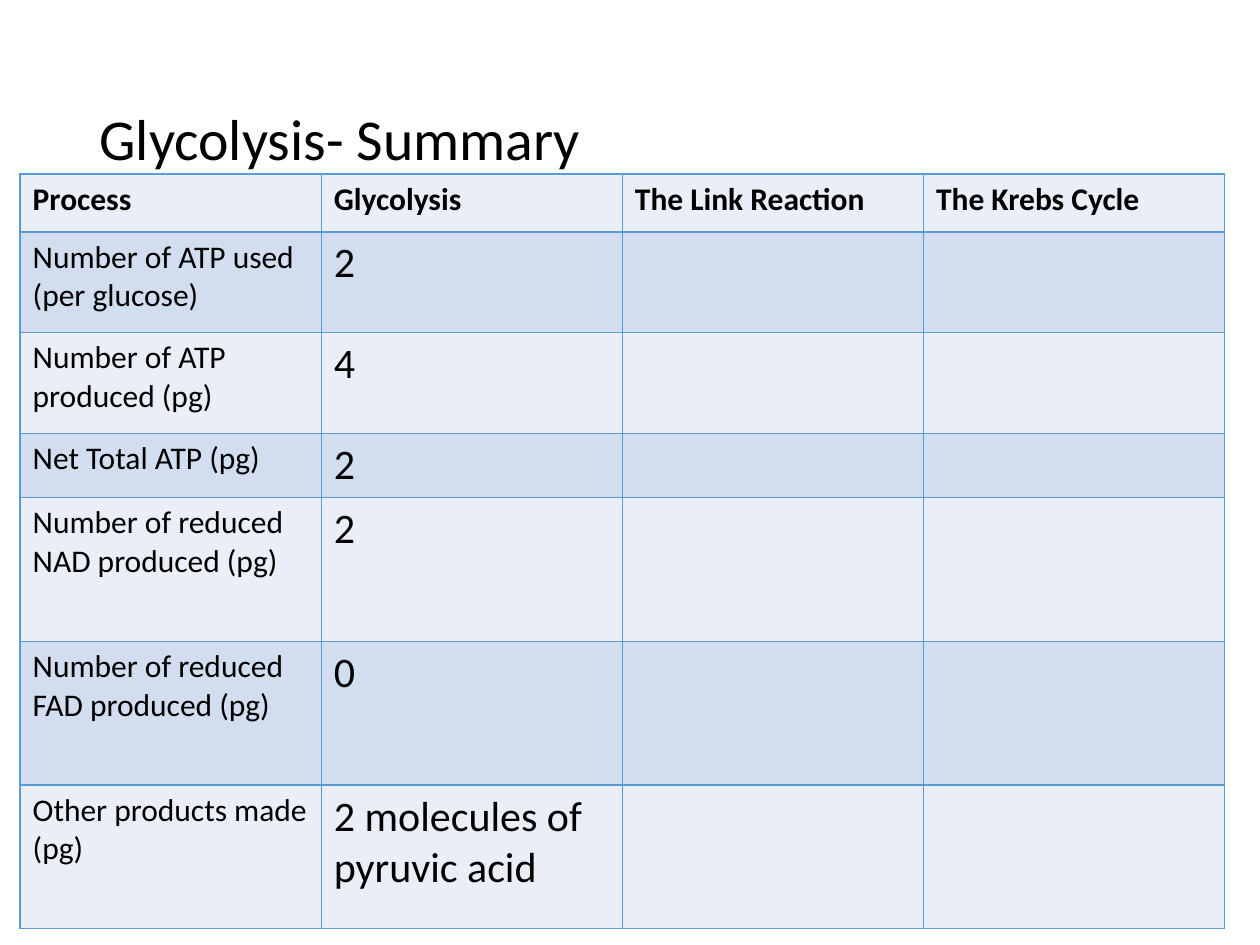
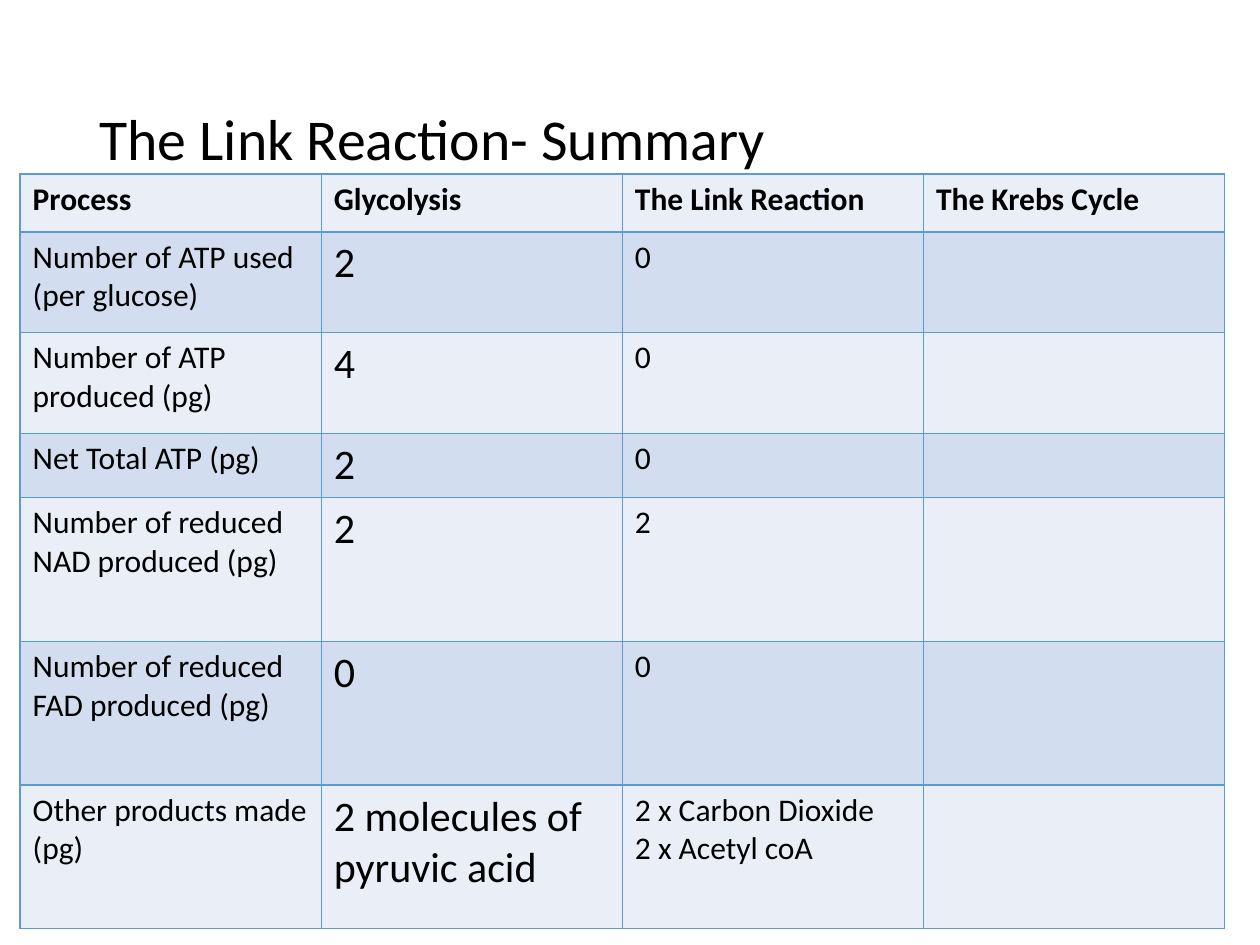
from lxml import etree
from pptx import Presentation
from pptx import util as u
from pptx.dml.color import RGBColor
from pptx.enum import text
from pptx.oxml import ns

# Shared look
W, H = 10, 7.5
FONT = "Calibri"
INK, BORDER = "000000", "5B9BD5"
BANDS = ("EAEFF7", "D2DEEF")
LABEL_PT, GLYCOLYSIS_PT, TITLE_PT = 18, 24, 33

# Table grid, in inches
TABLE_LEFT, TABLE_TOP, COL_WIDTH = 0.16, 1.38, 2.39
ROW_HEIGHTS = [0.46, 0.8, 0.8, 0.51, 1.14, 1.14, 1.14]

# Table columns; a line break starts a new paragraph
PROCESS = [
    "Process",
    "Number of ATP used\n(per glucose)",
    "Number of ATP produced (pg)",
    "Net Total ATP (pg)",
    "Number of reduced NAD produced (pg)",
    "Number of reduced FAD produced (pg)",
    "Other products made (pg)",
]
GLYCOLYSIS = ["Glycolysis", "2", "4", "2", "2", "0", "2 molecules of pyruvic acid"]
LINK = ["The Link Reaction", "0", "0", "0", "2", "0", "2 x Carbon Dioxide\n2 x Acetyl coA"]
KREBS = ["The Krebs Cycle"] + [""] * 6
LINK_BLANK = LINK[:1] + [""] * 6


def rgb(value):
    return RGBColor.from_string(value)


def write(tf, content, size, bold=False):
    """Fill a text frame, one run per line."""
    for i, line in enumerate(content.split("\n")):
        p = tf.paragraphs[0] if i == 0 else tf.add_paragraph()
        p.alignment = text.PP_ALIGN.LEFT
        r = p.add_run()
        r.text = line
        r.font.name, r.font.size, r.font.bold = FONT, u.Pt(size), bold
        r.font.color.rgb = rgb(INK)


def add_title(slide, content):
    sp = slide.shapes.title
    sp.left, sp.top = u.Inches(0.069 * W), u.Inches(0.4)
    sp.width, sp.height = u.Inches(0.862 * W), u.Inches(1.45)
    tf = sp.text_frame
    tf.auto_size = text.MSO_AUTO_SIZE.NONE
    tf.vertical_anchor = text.MSO_ANCHOR.MIDDLE
    write(tf, content, TITLE_PT)
    tf.paragraphs[0].line_spacing = 0.9


def add_borders(cell):
    tc_pr = cell._tc.get_or_add_tcPr()
    for side in ("a:lnL", "a:lnR", "a:lnT", "a:lnB"):
        ln = etree.SubElement(tc_pr, ns.qn(side), w=str(u.Pt(1)))
        fill = etree.SubElement(ln, ns.qn("a:solidFill"))
        etree.SubElement(fill, ns.qn("a:srgbClr"), val=BORDER)


def add_summary_table(slide, columns):
    frame = slide.shapes.add_table(
        len(ROW_HEIGHTS), len(columns), u.Inches(TABLE_LEFT), u.Inches(TABLE_TOP),
        u.Inches(COL_WIDTH * len(columns)), u.Inches(sum(ROW_HEIGHTS)))
    table = frame.table
    table.first_row = table.horz_banding = False
    for row, height in zip(table.rows, ROW_HEIGHTS):
        row.height = u.Inches(height)
    for c, column in enumerate(columns):
        table.columns[c].width = u.Inches(COL_WIDTH)
        for r, content in enumerate(column):
            cell = table.cell(r, c)
            add_borders(cell)
            cell.fill.solid()
            cell.fill.fore_color.rgb = rgb(BANDS[r % 2])
            if content:
                large = column is GLYCOLYSIS and r > 0
                write(cell.text_frame, content,
                      GLYCOLYSIS_PT if large else LABEL_PT, bold=r == 0)


def add_summary_slide(prs, title, columns):
    slide = prs.slides.add_slide(prs.slide_layouts.get_by_name("Title Only"))
    add_title(slide, title)
    add_summary_table(slide, columns)


def main():
    prs = Presentation()
    prs.slide_width, prs.slide_height = u.Inches(W), u.Inches(H)
    add_summary_slide(prs, "Glycolysis- Summary", [PROCESS, GLYCOLYSIS, LINK_BLANK, KREBS])
    add_summary_slide(prs, "The Link Reaction- Summary", [PROCESS, GLYCOLYSIS, LINK, KREBS])
    prs.save("out.pptx")


if __name__ == "__main__":
    main()
